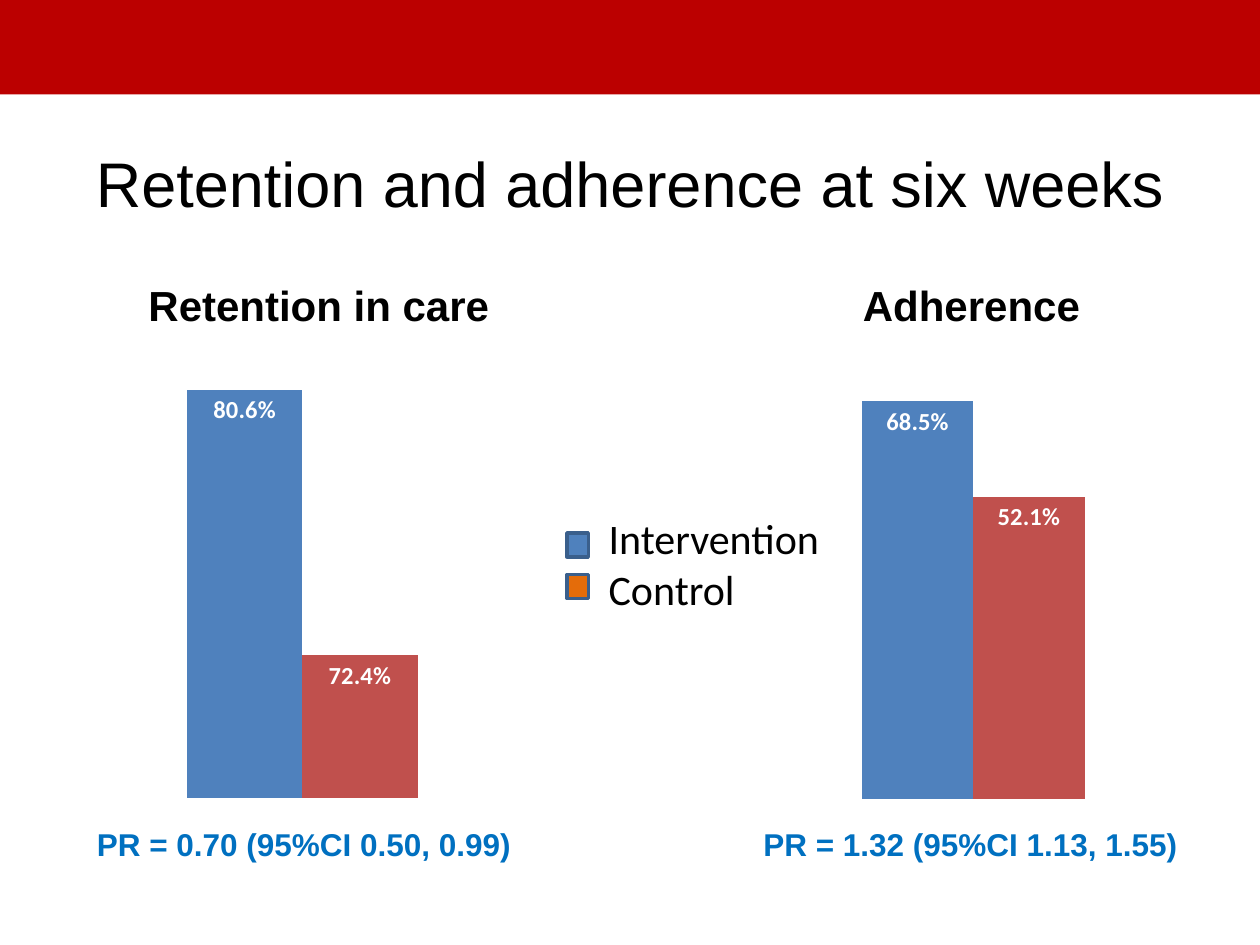
from typing import NamedTuple

from pptx import Presentation, util as u
from pptx.chart.data import CategoryChartData
from pptx.dml.color import RGBColor
from pptx.enum import chart as ch, shapes, text

RED = RGBColor(0xBB, 0x00, 0x00)
BLUE = RGBColor(0x4F, 0x81, 0xBD)
BRICK = RGBColor(0xC0, 0x50, 0x4D)
ORANGE = RGBColor(0xE4, 0x6C, 0x0A)
OUTLINE = RGBColor(0x3A, 0x5F, 0x8C)
RATIO_BLUE = RGBColor(0x00, 0x70, 0xC0)
BLACK = RGBColor(0, 0, 0)
WHITE = RGBColor(0xFF, 0xFF, 0xFF)

COLS, ROWS = 100, 75  # slide grid
CELL = u.Inches(0.1)
HEADING_ROW, RATIO_ROW = 21.7, 65


class Box(NamedTuple):
    col: float
    row: float
    cols: float
    rows: float

    def emu(self) -> list[u.Length]:
        return [u.Emu(round(n * CELL)) for n in self]


class Panel(NamedTuple):
    heading: str
    heading_col: float
    heading_cols: float
    ratio: str
    ratio_col: float
    chart: Box
    values: tuple[float, float]
    low: float
    high: float


PANELS = (
    Panel("Retention in care", 10.8, 29.3, "PR = 0.70 (95%CI 0.50, 0.99)", 6.7,
          Box(5, 26.6, 38, 37.5), (0.806, 0.724), 0.68, 0.82),
    Panel("Adherence", 67.5, 19.4, "PR = 1.32 (95%CI 1.13, 1.55)", 59.6,
          Box(58.9, 25.8, 36.7, 38.4), (0.685, 0.521), 0, 0.8),
)
LEGEND = (("Intervention", BLUE), ("Control", ORANGE))


def style(font, size: float, color: RGBColor, bold: bool = False, name: str = "Arial") -> None:
    font.name, font.size, font.bold = name, u.Pt(size), bold
    font.color.rgb = color


def add_text(slide, box: Box, lines: list[str], size: float, color: RGBColor,
             bold: bool = True, name: str = "Arial"):
    tf = slide.shapes.add_textbox(*box.emu()).text_frame
    tf.word_wrap = False
    tf.auto_size = text.MSO_AUTO_SIZE.SHAPE_TO_FIT_TEXT
    for i, line in enumerate(lines):
        p = tf.paragraphs[0] if i == 0 else tf.add_paragraph()
        r = p.add_run()
        r.text = line
        style(r.font, size, color, bold, name)
    return tf


def add_rect(slide, box: Box, fill: RGBColor, line: RGBColor | None = None) -> None:
    sp = slide.shapes.add_shape(shapes.MSO_SHAPE.RECTANGLE, *box.emu())
    sp.shadow.inherit = False
    sp.fill.solid()
    sp.fill.fore_color.rgb = fill
    if line is None:
        sp.line.fill.background()
    else:
        sp.line.color.rgb = line
        sp.line.width = u.Pt(2)


def add_columns(slide, panel: Panel) -> None:
    data = CategoryChartData(number_format="0.0%")
    data.categories = ["1"]
    for i, value in enumerate(panel.values, 1):
        data.add_series(f"Series {i}", [value])
    chart = slide.shapes.add_chart(
        ch.XL_CHART_TYPE.COLUMN_CLUSTERED, *panel.chart.emu(), data).chart
    style(chart.font, 10, BLACK, name="Calibri")
    chart.has_legend = chart.has_title = False
    axis = chart.value_axis
    axis.minimum_scale, axis.maximum_scale = panel.low, panel.high
    axis.has_major_gridlines = False
    axis.visible = chart.category_axis.visible = False
    plot = chart.plots[0]
    plot.gap_width, plot.overlap, plot.vary_by_categories = 199, 0, False
    for series, color in zip(plot.series, (BLUE, BRICK)):
        series.format.fill.solid()
        series.format.fill.fore_color.rgb = color
        labels = series.data_labels
        labels.show_value = True
        labels.number_format, labels.number_format_is_linked = "0.0%", False
        labels.position = ch.XL_LABEL_POSITION.INSIDE_END
        style(labels.font, 14, WHITE, True, "Calibri")


def add_panel(slide, panel: Panel) -> None:
    add_columns(slide, panel)
    add_text(slide, Box(panel.heading_col, HEADING_ROW, panel.heading_cols, 5),
             [panel.heading], 24, BLACK)
    add_text(slide, Box(panel.ratio_col, RATIO_ROW, 35.2, 4),
             [panel.ratio], 18, RATIO_BLUE)


def add_legend(slide) -> None:
    tf = add_text(slide, Box(44.2, 40.2, 22.1, 9.1), [name for name, _ in LEGEND],
                  24, BLACK, False, "Calibri")
    tf.margin_left = u.Inches(0.41)
    for i, (_, color) in enumerate(LEGEND):
        add_rect(slide, Box(45, 42.3 + 3.3 * i, 1.7, 1.9), color, OUTLINE)


def add_title(slide, title: str) -> None:
    sp = slide.shapes.title
    sp.left, sp.top, sp.width, sp.height = Box(5, 9.8, 90, 9.3).emu()
    tf = sp.text_frame
    tf.vertical_anchor = text.MSO_ANCHOR.MIDDLE
    p = tf.paragraphs[0]
    p.alignment = text.PP_ALIGN.CENTER
    r = p.add_run()
    r.text = title
    style(r.font, 36, BLACK)


def main() -> None:
    prs = Presentation()
    prs.slide_width, prs.slide_height = COLS * CELL, ROWS * CELL
    slide = prs.slides.add_slide(prs.slide_layouts.get_by_name("Title Only"))
    add_rect(slide, Box(0, 0, COLS, ROWS / 10), RED)
    add_title(slide, "Retention and adherence at six weeks")
    for panel in PANELS:
        add_panel(slide, panel)
    add_legend(slide)
    prs.save("out.pptx")


if __name__ == "__main__":
    main()
